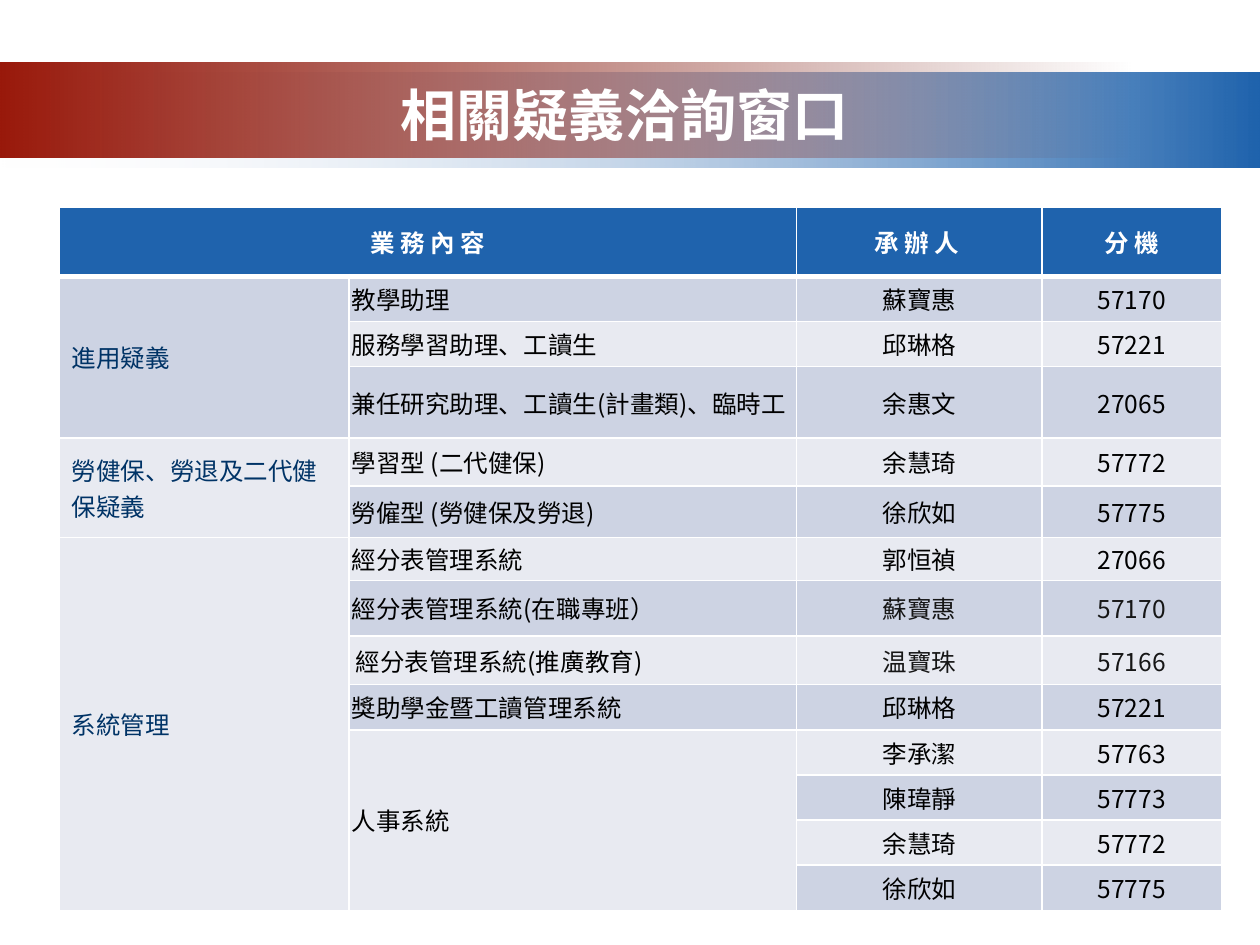
from dataclasses import dataclass

from pptx import Presentation
from pptx.dml.color import RGBColor
from pptx.enum.shapes import MSO_SHAPE as Preset
from pptx.enum.text import MSO_ANCHOR as Anchor, PP_ALIGN as Align
from pptx.oxml.ns import qn
from pptx.util import Cm, Pt
from lxml.etree import SubElement


@dataclass(frozen=True)
class Theme:
    font: str = "Noto Sans CJK SC"
    title_size: int = 32
    table_size: int = 14
    white: str = "FFFFFF"
    black: str = "000000"
    soft_black: str = "161616"
    navy: str = "003366"
    blue: str = "1F63AD"
    pale_blue: str = "F1F2F7"
    red: str = "99190B"
    dark_red: str = "6D1208"
    bands: tuple = ("E8EAF1", "CDD3E3")
    border: int = 1
    header_border: int = 3


COLUMN_WIDTHS = (5.84, 9.02, 4.95, 3.61)
ROW_HEIGHTS = (1.4, 0.91, 0.91, 0.91, 0.97, 1.04, 0.86, 1.12) + (0.91,) * 6
HEADERS = ((0, "業 務 內 容"), (2, "承 辦 人 "), (3, "分 機"))
CATEGORIES = ((1, 3, "進用疑義"), (4, 5, "勞健保、勞退及二代健保疑義"), (6, 13, "系統管理"))
CONTACTS = (
    ("教學助理", "蘇寶惠", "57170"),
    ("服務學習助理、工讀生", "邱琳格", "57221"),
    ("兼任研究助理、工讀生(計畫類)、臨時工", "余惠文", "27065"),
    ("學習型 (二代健保)", "余慧琦", "57772"),
    ("勞僱型 (勞健保及勞退)", "徐欣如", "57775"),
    ("經分表管理系統", "郭恒禎", "27066"),
    ("經分表管理系統(在職專班）", "蘇寶惠", "57170"),
    ("經分表管理系統(推廣教育)", "温寶珠", "57166"),
    ("獎助學金暨工讀管理系統", "邱琳格", "57221"),
    ("人事系統", "李承潔", "57763"),
    (None, "陳瑋靜", "57773"),
    (None, "余慧琦", "57772"),
    (None, "徐欣如", "57775"),
)
SOFT_ROWS = (7, 8)
ROOMY_ROW = 8
PERSONNEL_ROWS = (10, 13)
TIGHT = (0.05, 0)
ROOMY = (0.13, 0.13)
STANDARD = (0.25, 0.13)


class SlideBuilder:
    def __init__(self, slide, theme):
        self.slide = slide
        self.theme = theme

    def set_text(self, frame, text, size, color, align=Align.LEFT, bold=False):
        frame.text = text
        paragraph = frame.paragraphs[0]
        paragraph.alignment = align
        font = paragraph.font
        font.name = self.theme.font
        font.size = Pt(size)
        font.bold = bold
        font.color.rgb = RGBColor.from_string(color)
        properties = paragraph._p.pPr.find(qn("a:defRPr"))
        SubElement(properties, qn("a:ea"), typeface=self.theme.font)

    def title(self, text, left, top, width, height):
        title = self.slide.shapes.title
        title.left, title.top = Cm(left), Cm(top)
        title.width, title.height = Cm(width), Cm(height)
        title.text_frame.vertical_anchor = Anchor.MIDDLE
        self.set_text(title.text_frame, text, self.theme.title_size,
                      self.theme.white, Align.CENTER, True)

    def banner(self, left, top, width, height, colors, clear_stop):
        shape = self.slide.shapes.add_shape(
            Preset.RECTANGLE, Cm(left), Cm(top), Cm(width), Cm(height))
        shape.shadow.inherit = False
        shape.line.fill.background()
        shape.fill.gradient()
        shape.fill.gradient_angle = 0
        for stop, color, position in zip(shape.fill.gradient_stops, colors, (0, 1)):
            stop.color.rgb = RGBColor.from_string(color)
            stop.position = position
        clear = list(shape._element.iter(qn("a:srgbClr")))[clear_stop]
        SubElement(clear, qn("a:alpha"), val="0")
        self.slide.shapes.title._element.addprevious(shape._element)

    def table(self, left, top, widths, heights):
        frame = self.slide.shapes.add_table(
            len(heights), len(widths), Cm(left), Cm(top),
            Cm(sum(widths)), Cm(sum(heights)))
        table = frame.table
        table.horz_banding = False
        for column, width in zip(table.columns, widths):
            column.width = Cm(width)
        for index, height in enumerate(heights):
            table.rows[index].height = Cm(height)
            for cell in table.rows[index].cells:
                self.style_cell(cell, index)
        return table

    def style_cell(self, cell, row):
        theme = self.theme
        properties = cell._tc.get_or_add_tcPr()
        for side in "LRTB":
            thick = (row, side) in ((0, "B"), (1, "T"))
            width = theme.header_border if thick else theme.border
            line = SubElement(properties, qn(f"a:ln{side}"), w=str(Pt(width)))
            fill = SubElement(line, qn("a:solidFill"))
            SubElement(fill, qn("a:srgbClr"), val=theme.white)
        cell.fill.solid()
        color = theme.bands[row % 2] if row else theme.blue
        cell.fill.fore_color.rgb = RGBColor.from_string(color)

    def cell(self, cell, text, color, align=Align.LEFT, insets=STANDARD, bold=False):
        cell.vertical_anchor = Anchor.MIDDLE
        cell.margin_left = cell.margin_right = Cm(insets[0])
        cell.margin_top = cell.margin_bottom = Cm(insets[1])
        self.set_text(cell.text_frame, text, self.theme.table_size, color, align, bold)


def fill_table(builder, table):
    theme = builder.theme
    table.cell(0, 0).merge(table.cell(0, 1))
    for column, text in HEADERS:
        builder.cell(table.cell(0, column), text, theme.white, Align.CENTER, bold=True)
    for first, last, text in CATEGORIES:
        table.cell(first, 0).merge(table.cell(last, 0))
        builder.cell(table.cell(first, 0), text, theme.navy)
    first, last = PERSONNEL_ROWS
    table.cell(first, 1).merge(table.cell(last, 1))
    for row, (topic, *contact) in enumerate(CONTACTS, start=1):
        roomy = row == ROOMY_ROW
        if topic:
            builder.cell(table.cell(row, 1), topic, theme.black,
                         insets=ROOMY if roomy else TIGHT)
        color = theme.soft_black if row in SOFT_ROWS else theme.black
        for column, text in enumerate(contact, start=2):
            builder.cell(table.cell(row, column), text, color, Align.CENTER,
                         STANDARD if roomy else TIGHT)


def main():
    presentation = Presentation()
    presentation.slide_width, presentation.slide_height = Cm(25.4), Cm(19.05)
    slide = presentation.slides.add_slide(presentation.slide_layouts[5])
    theme = Theme()
    builder = SlideBuilder(slide, theme)
    builder.banner(0, 1.47, 25.4, 1.9, (theme.pale_blue, theme.blue), 0)
    builder.banner(0, 1.27, 22.86, 1.9, (theme.red, theme.dark_red), 1)
    builder.title("相關疑義洽詢窗口", 2.34, 1.52, 20.52, 1.57)
    fill_table(builder, builder.table(1.2, 4.17, COLUMN_WIDTHS, ROW_HEIGHTS))
    presentation.save("out.pptx")


if __name__ == "__main__":
    main()
